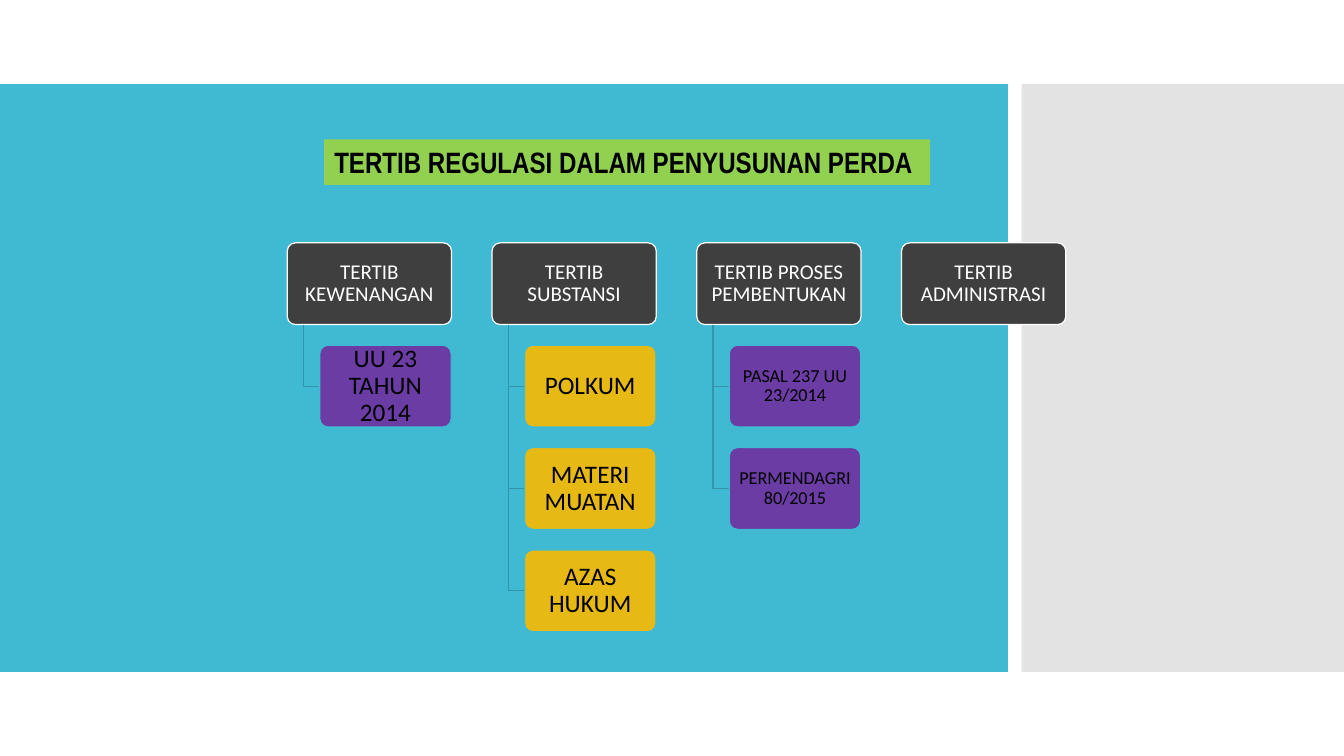
from lxml import etree
from pptx import Presentation
from pptx.dml.color import RGBColor
from pptx.enum.shapes import MSO_SHAPE
from pptx.enum.text import MSO_ANCHOR, MSO_AUTO_SIZE, PP_ALIGN
from pptx.oxml.ns import qn
from pptx.util import Cm, Pt

RECT, ROUNDED = MSO_SHAPE.RECTANGLE, MSO_SHAPE.ROUNDED_RECTANGLE
LEFT, CENTER = PP_ALIGN.LEFT, PP_ALIGN.CENTER
MIDDLE, TOP = MSO_ANCHOR.MIDDLE, MSO_ANCHOR.TOP
NO_FIT = MSO_AUTO_SIZE.NONE

BLACK = RGBColor(0x00, 0x00, 0x00)
WHITE = RGBColor(0xFF, 0xFF, 0xFF)
TEAL = RGBColor(0x40, 0xBA, 0xD2)
DARK_TEAL = RGBColor(0x33, 0x95, 0xA8)
GREY = RGBColor(0xC8, 0xC8, 0xC8)
CHARCOAL = RGBColor(0x3F, 0x3F, 0x3F)
PURPLE = RGBColor(0x70, 0x30, 0xA0)
YELLOW = RGBColor(0xFA, 0xB9, 0x00)
GREEN = RGBColor(0x92, 0xD0, 0x50)

# Tree geometry in centimetres
TREE_LEFT, TREE_TOP = 7.24, 6.12
COLUMN_STEP, ROW_STEP = 5.16, 2.58
HEADER_W, CHILD_W, BOX_H = 4.14, 3.31, 2.06
STEM, INDENT = 0.41, 0.82

# Header, child colour, child text size, children
BRANCHES = [
    ("TERTIB KEWENANGAN", PURPLE, 18, ["UU 23 TAHUN 2014"]),
    ("TERTIB SUBSTANSI", YELLOW, 18, ["POLKUM", "MATERI MUATAN", "AZAS HUKUM"]),
    ("TERTIB PROSES PEMBENTUKAN", PURPLE, 13,
     ["PASAL 237 UU 23/2014", "PERMENDAGRI 80/2015"]),
    ("TERTIB ADMINISTRASI", PURPLE, 18, []),
]


def set_all(obj, values):
    for name, value in values.items():
        setattr(obj, name, value)


class TreeSlide:
    line_width = Pt(0.85)
    frame = {"word_wrap": True, "auto_size": NO_FIT, "vertical_anchor": MIDDLE,
             "margin_left": Cm(0.14), "margin_right": Cm(0.14),
             "margin_top": Cm(0.11), "margin_bottom": Cm(0.11)}
    paragraph = {"alignment": CENTER, "line_spacing": 0.9}
    title_frame = {"word_wrap": True, "auto_size": NO_FIT, "vertical_anchor": TOP}
    title_font = {"name": "Arial Narrow", "size": Pt(21), "bold": True}

    def __init__(self, prs):
        self.s = prs.slides.add_slide(prs.slide_layouts[5])

    def shape(self, kind, x, y, w, h, color, opacity=100, line=None):
        sp = self.s.shapes.add_shape(kind, Cm(x), Cm(y), Cm(w), Cm(h))
        sp.shadow.inherit = False
        sp.fill.solid()
        sp.fill.fore_color.rgb = color
        if opacity < 100:
            clr = sp.element.spPr.find(qn("a:solidFill"))[0]
            etree.SubElement(clr, qn("a:alpha"), val=str(opacity * 1000))
        if line is None:
            sp.line.fill.background()
        else:
            sp.line.color.rgb = line
            sp.line.width = self.line_width
        return sp

    def box(self, x, y, w, text, size, font_color, color, line, opacity=100):
        sp = self.shape(ROUNDED, x, y, w, BOX_H, color, opacity, line)
        sp.adjustments[0] = 0.1
        tf = sp.text_frame
        set_all(tf, self.frame)
        p = tf.paragraphs[0]
        set_all(p, self.paragraph)
        r = p.add_run()
        r.text = text
        set_all(r.font, {"name": "Calibri", "size": Pt(size)})
        r.font.color.rgb = font_color

    def elbow(self, x, top, bottom):
        """Draw a stem down from top to bottom, then right to a child box."""
        builder = self.s.shapes.build_freeform(Cm(x), Cm(top))
        builder.add_line_segments(
            [(Cm(x), Cm(bottom)), (Cm(x + STEM), Cm(bottom))], close=False)
        sp = builder.convert_to_shape()
        sp.shadow.inherit = False
        sp.fill.background()
        sp.line.color.rgb = DARK_TEAL
        sp.line.width = self.line_width

    def branch(self, x, header, color, size, children):
        self.box(x, TREE_TOP, HEADER_W, header, 15, WHITE, CHARCOAL, WHITE)
        for row, text in enumerate(children, 1):
            y = TREE_TOP + row * ROW_STEP
            self.elbow(x + STEM, TREE_TOP + BOX_H, y + BOX_H / 2)
            self.box(x + INDENT, y, CHILD_W, text, size, BLACK, color, TEAL, 90)

    def title(self, x, y, w, h, text):
        sp = self.s.shapes.title
        set_all(sp, {"left": Cm(x), "top": Cm(y), "width": Cm(w), "height": Cm(h)})
        sp.fill.solid()
        sp.fill.fore_color.rgb = GREEN
        tf = sp.text_frame
        set_all(tf, self.title_frame)
        p = tf.paragraphs[0]
        p.alignment = LEFT
        r = p.add_run()
        r.text = text
        set_all(r.font, self.title_font)
        r.font.color.rgb = BLACK
        # Bring the title in front of the background panels
        sp.element.getparent().append(sp.element)


def main():
    prs = Presentation()
    prs.slide_width, prs.slide_height = Cm(33.87), Cm(19.05)
    slide = TreeSlide(prs)
    slide.shape(RECT, 0, 2.12, 25.4, 14.81, TEAL)
    slide.shape(RECT, 25.75, 2.12, 8.12, 14.81, GREY, opacity=50)
    for column, branch in enumerate(BRANCHES):
        slide.branch(TREE_LEFT + column * COLUMN_STEP, *branch)
    slide.title(8.17, 3.51, 15.27, 1.15, "TERTIB REGULASI DALAM PENYUSUNAN PERDA")
    prs.save("out.pptx")


if __name__ == "__main__":
    main()
